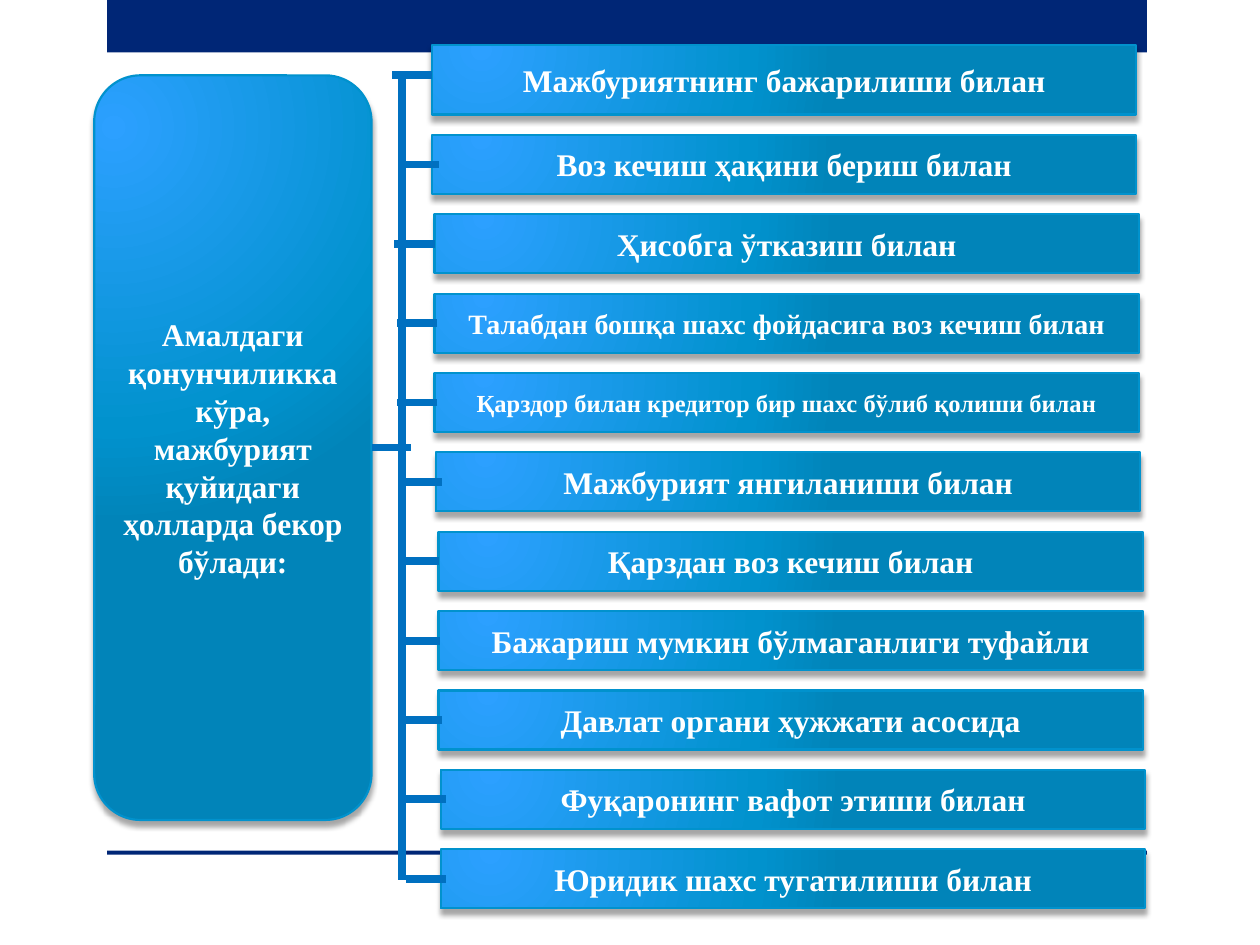
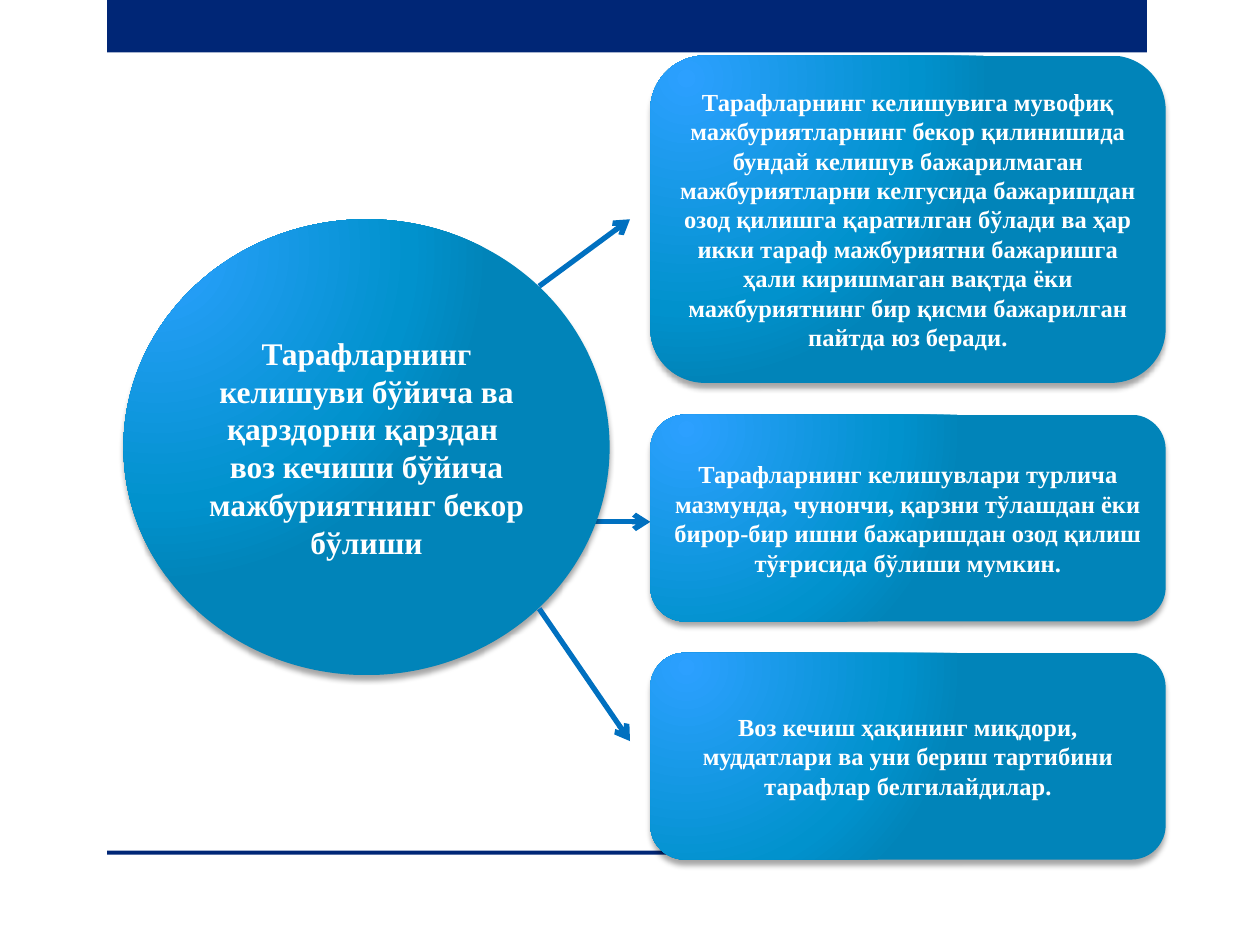
from pptx import Presentation
from pptx.dml.color import RGBColor
from pptx.enum.shapes import MSO_CONNECTOR, MSO_SHAPE
from pptx.enum.text import MSO_ANCHOR, PP_ALIGN
from pptx.oxml import parse_xml
from pptx.oxml.ns import nsdecls
from pptx.util import Cm, Pt

RECTANGLE = MSO_SHAPE.RECTANGLE
ROUNDED = MSO_SHAPE.ROUNDED_RECTANGLE
OVAL = MSO_SHAPE.OVAL
STRAIGHT = MSO_CONNECTOR.STRAIGHT
MIDDLE = MSO_ANCHOR.MIDDLE
CENTER = PP_ALIGN.CENTER

FONT = "Times New Roman"
COLORS = {
    "band": "002676",
    "light": "2CA0FF",
    "middle": "0192CD",
    "dark": "0184B9",
    "connector": "0070C0",
    "text": "FFFFFF",
    "shadow": "000000",
}
GRADIENT = f"""<a:gradFill {nsdecls("a")} rotWithShape="1"><a:gsLst>
<a:gs pos="0"><a:srgbClr val="{COLORS["light"]}"/></a:gs>
<a:gs pos="76000"><a:srgbClr val="{COLORS["middle"]}"/></a:gs>
<a:gs pos="100000"><a:srgbClr val="{COLORS["dark"]}"/></a:gs></a:gsLst>
<a:path path="circle"><a:fillToRect l="15000" t="15000" r="100000" b="100000"/></a:path>
</a:gradFill>"""
SHADOW = f"""<a:effectLst {nsdecls("a")}>
<a:outerShdw blurRad="{Pt(3)}" dist="{Pt(3)}" dir="5400000" rotWithShape="0">
<a:srgbClr val="{COLORS["shadow"]}"><a:alpha val="35000"/></a:srgbClr></a:outerShdw>
</a:effectLst>"""


def add_box(slide, kind, left, top, width, height, text, size, outlined=False):
    """Add a gradient box with a soft shadow; each line of text is a paragraph."""
    shape = slide.shapes.add_shape(kind, Cm(left), Cm(top), Cm(width), Cm(height))
    shape.fill.background()
    if outlined:
        shape.line.color.rgb = RGBColor.from_string(COLORS["middle"])
        shape.line.width = Pt(1.25)
    else:
        shape.line.fill.background()
    properties = shape.element.spPr
    no_fill = properties.find("{*}noFill")
    properties.replace(no_fill, parse_xml(GRADIENT))
    properties.append(parse_xml(SHADOW))
    text_frame = shape.text_frame
    text_frame.text = text
    text_frame.word_wrap = True
    text_frame.vertical_anchor = MIDDLE
    for paragraph in text_frame.paragraphs:
        paragraph.alignment = CENTER
        for run in paragraph.runs:
            run.font.name = FONT
            run.font.size = Pt(size)
            run.font.bold = True
            run.font.color.rgb = RGBColor.from_string(COLORS["text"])


def add_line(slide, start, end, width, arrow=False):
    line = slide.shapes.add_connector(
        STRAIGHT, Cm(start[0]), Cm(start[1]), Cm(end[0]), Cm(end[1])
    )
    line.line.color.rgb = RGBColor.from_string(COLORS["connector"])
    line.line.width = Pt(width)
    properties = line.element.spPr
    if arrow:
        tail = parse_xml(f'<a:tailEnd {nsdecls("a")} type="arrow"/>')
        properties.find("{*}ln").append(tail)
    properties.append(parse_xml(f'<a:effectLst {nsdecls("a")}/>'))


presentation = Presentation()
presentation.slide_width = Cm(25.4)
presentation.slide_height = Cm(19.05)
layout = presentation.slide_layouts[6]
grounds_slide = presentation.slides.add_slide(layout)
agreement_slide = presentation.slides.add_slide(layout)

# Shared bands are moved from the first slide to the layout
for top, height in [(0, 1.06), (17.15, 0.08)]:
    band = grounds_slide.shapes.add_shape(
        RECTANGLE, Cm(2.16), Cm(top), Cm(20.96), Cm(height)
    )
    band.fill.solid()
    band.fill.fore_color.rgb = RGBColor.from_string(COLORS["band"])
    band.line.fill.background()
    band.shadow.inherit = False
    layout.shapes.element.append(band.element)

# Slide 1: grounds for ending an obligation
add_box(
    grounds_slide, ROUNDED, 1.9, 1.52, 5.59, 15.01,
    "Амалдаги қонунчиликка кўра, мажбурият қуйидаги ҳолларда бекор бўлади:",
    18, outlined=True,
)

# Text, font size, left edge of the box, left end of its branch
grounds = [
    ("Мажбуриятнинг бажарилиши билан", 18, 8.71, 7.9),
    ("Воз кечиш ҳақини бериш билан", 18, 8.71, 8.03),
    ("Ҳисобга ўтказиш билан", 18, 8.76, 7.95),
    ("Талабдан бошқа шахс фойдасига воз кечиш билан", 16, 8.76, 8),
    ("Қарздор билан кредитор бир шахс бўлиб қолиши билан", 14, 8.76, 8),
    ("Мажбурият янгиланиши билан", 18, 8.79, 8.1),
    ("Қарздан воз кечиш билан", 18, 8.84, 8.03),
    ("Бажариш мумкин бўлмаганлиги туфайли", 18, 8.84, 8.05),
    ("Давлат органи ҳужжати асосида", 18, 8.84, 8.1),
    ("Фуқаронинг вафот этиши билан", 18, 8.89, 8.18),
    ("Юридик шахс тугатилиши билан", 18, 8.89, 8.18),
]
row_pitch = 1.6
row_height = 1.19
second_row_top = 2.72
trunk_x, trunk_top, trunk_bottom = 8.1, 1.52, 17.73
branch_length = 0.81

branches = [((trunk_x, trunk_top), (trunk_x, trunk_bottom))]
for row, (text, size, left, branch_left) in enumerate(grounds):
    if row == 0:
        top, height, branch_y = 0.91, 1.4, trunk_top
    else:
        top = second_row_top + (row - 1) * row_pitch
        height = row_height
        branch_y = top + height / 2
    add_box(grounds_slide, RECTANGLE, left, top, 14.2, height, text, size, outlined=True)
    branches.append(((branch_left + branch_length, branch_y), (branch_left, branch_y)))
branches.append(((8.28, 9.02), (7.49, 9.02)))
for start, end in branches:
    add_line(grounds_slide, start, end, 4.5)

# Slide 2: ending an obligation by agreement
add_line(agreement_slide, (11.79, 10.52), (13.11, 10.52), 3, arrow=True)
add_box(
    agreement_slide, OVAL, 2.49, 4.42, 9.8, 9.19,
    "Тарафларнинг келишуви бўйича ва қарздорни қарздан \n"
    "воз кечиши бўйича мажбуриятнинг бекор бўлиши",
    18,
)
agreement_rules = [
    (1.12, 6.6,
     "Тарафларнинг келишувига мувофиқ мажбуриятларнинг бекор қилинишида бундай "
     "келишув бажарилмаган мажбуриятларни келгусида бажаришдан озод қилишга "
     "қаратилган бўлади ва ҳар икки тараф мажбуриятни бажаришга ҳали киришмаган "
     "вақтда ёки мажбуриятнинг бир қисми бажарилган пайтда юз беради."),
    (8.36, 4.17,
     "Тарафларнинг келишувлари турлича мазмунда, чунончи, қарзни тўлашдан ёки "
     "бирор-бир ишни бажаришдан озод қилиш тўғрисида бўлиши мумкин."),
    (13.16, 4.17,
     "Воз кечиш ҳақининг миқдори, муддатлари ва уни бериш тартибини тарафлар "
     "белгилайдилар."),
]
for top, height, text in agreement_rules:
    add_box(agreement_slide, ROUNDED, 13.11, top, 10.39, height, text, 14)
for start_y, end_y in [(5.77, 4.42), (12.27, 14.94)]:
    add_line(agreement_slide, (10.87, start_y), (12.7, end_y), 3, arrow=True)

presentation.save("out.pptx")
